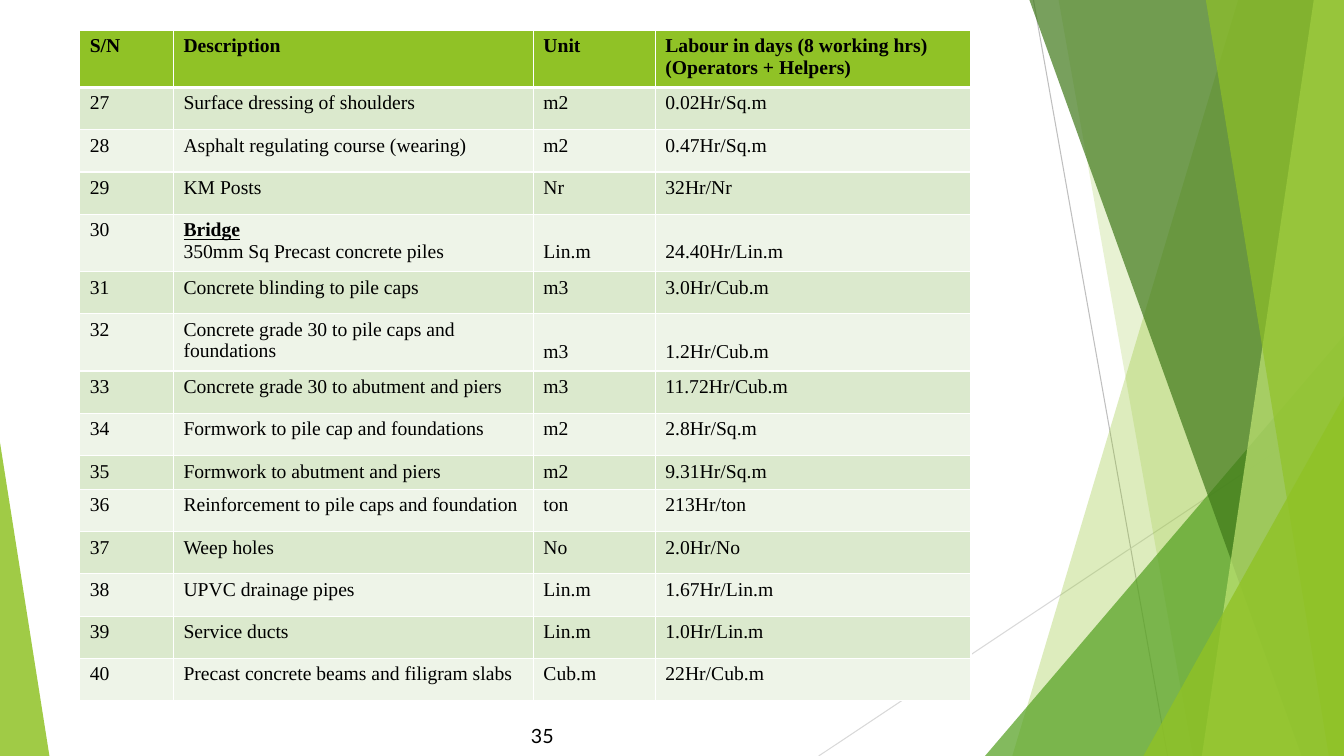
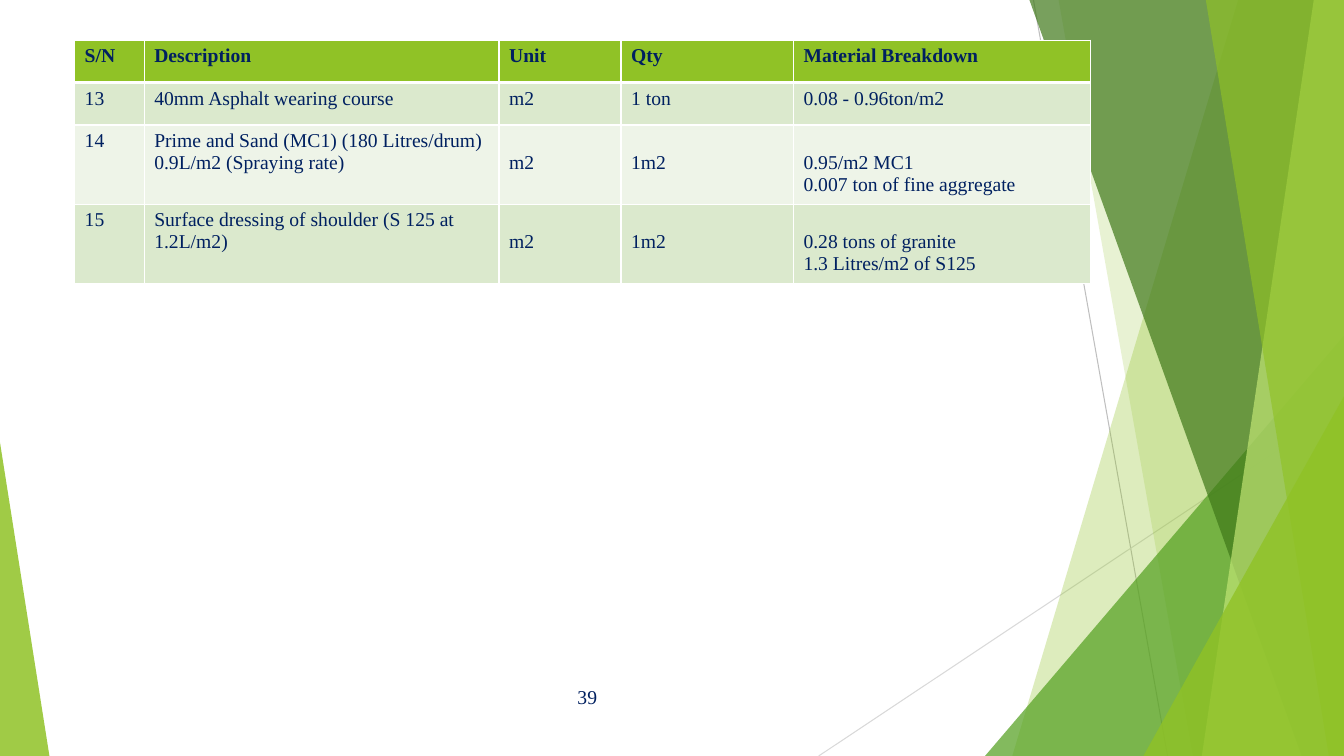
from lxml.etree import SubElement
from pptx import Presentation
from pptx.dml.color import RGBColor
from pptx.enum.shapes import MSO_CONNECTOR as Link, MSO_SHAPE as Preset
from pptx.enum.text import MSO_ANCHOR as Anchor, PP_ALIGN as Align
from pptx.oxml.ns import qn
from pptx.util import Inches, Pt

WIDE, HIGH = 13.33, 7.5
WHITE = RGBColor(0xFF, 0xFF, 0xFF)
BLACK = RGBColor(0x00, 0x00, 0x00)
NAVY = RGBColor(0x00, 0x20, 0x60)
LIME = RGBColor(0x90, 0xC2, 0x26)
PALE = RGBColor(0xC0, 0xE4, 0x74)
LEAF = RGBColor(0x54, 0xA0, 0x21)
MOSS = RGBColor(0x3F, 0x78, 0x19)
GREY = RGBColor(0xBF, 0xBF, 0xBF)
MIST = RGBColor(0xD9, 0xD9, 0xD9)
BANDS = RGBColor(0xDB, 0xE9, 0xCD), RGBColor(0xEE, 0xF4, 0xE8)

SERIF, SANS = "Times New Roman", "Lato"
INSET, LINE, ROW = 0.05, 0.22, 0.42

RAYS = [((10.25, 0), (11.58, HIGH), GREY), ((WIDE, 4.03), (8.12, HIGH), MIST)]
# A sheet is (top x, foot x); a wedge is (left, top, width, apex side)
PANES = [
    ((12.28, 10.04), LIME, 30),
    ((10.5, 11.83), LIME, 20),
    ((9.77, 3.33, 3.56, 1), LEAF, 72),
    ((10.21, 12.91), MOSS, 70),
    ((13.03, 11.92), PALE, 70),
    ((11.96, 13.18), LIME, 65),
    ((11.34, 3.93, 1.99, 1), LIME, 80),
    ((0, 4.39, 0.49, 0), LIME, 85),
]

LABOUR = [
    ("S/N", "Description", "Unit",
     "Labour in days (8 working hrs) (Operators + Helpers)"),
    ("27", "Surface dressing of shoulders", "m2", "0.02Hr/Sq.m"),
    ("28", "Asphalt regulating course (wearing)", "m2", "0.47Hr/Sq.m"),
    ("29", "KM Posts", "Nr", "32Hr/Nr"),
    ("30", "*Bridge\n350mm Sq Precast concrete piles", "Lin.m",
     "24.40Hr/Lin.m"),
    ("31", "Concrete blinding to pile caps", "m3", "3.0Hr/Cub.m"),
    ("32", "Concrete grade 30 to pile caps and foundations", "m3",
     "1.2Hr/Cub.m"),
    ("33", "Concrete grade 30 to abutment and piers", "m3", "11.72Hr/Cub.m"),
    ("34", "Formwork to pile cap and foundations", "m2", "2.8Hr/Sq.m"),
    ("35", "Formwork to abutment and piers", "m2", "9.31Hr/Sq.m"),
    ("36", "Reinforcement to pile caps and foundation", "ton", "213Hr/ton"),
    ("37", "Weep holes", "No", "2.0Hr/No"),
    ("38", "UPVC drainage pipes", "Lin.m", "1.67Hr/Lin.m"),
    ("39", "Service ducts", "Lin.m", "1.0Hr/Lin.m"),
    ("40", "Precast concrete beams and filigram slabs", "Cub.m",
     "22Hr/Cub.m"),
]
STOCK = [
    ("S/N", "Description", "Unit", "Qty", "Material Breakdown"),
    ("13", "40mm Asphalt wearing course", "m2", "1 ton", "0.08 - 0.96ton/m2"),
    ("14", "Prime and Sand (MC1) (180 Litres/drum) 0.9L/m2 (Spraying rate)",
     "m2", "1m2", "0.95/m2 MC1\n0.007 ton of fine aggregate"),
    ("15", "Surface dressing of shoulder (S 125 at 1.2L/m2)",
     "m2", "1m2", "0.28 tons of granite\n1.3 Litres/m2 of S125"),
]


def write(frame, text, color=BLACK, font=SERIF, size=14, bold=False,
          align=Align.LEFT):
    """Fill a frame line by line; a line marked * is a subheading."""
    frame.word_wrap = True
    for at, line in enumerate(text.split("\n")):
        para = frame.add_paragraph() if at else frame.paragraphs[0]
        para.alignment = align
        run = para.add_run()
        run.text = line.lstrip("*")
        face, sub = run.font, line.startswith("*")
        face.name, face.size, face.color.rgb = font, Pt(size), color
        face.bold = bold or sub
        face.underline = sub


def glaze(shape, color, alpha):
    """Give a shape a see-through fill and no line."""
    shape.shadow.inherit = False
    shape.line.fill.background()
    shape.fill.solid()
    shape.fill.fore_color.rgb = color
    tint = shape.fill._xPr.find(qn("a:solidFill"))[0]
    SubElement(tint, qn("a:alpha"), val=str(alpha * 1000))


def ray(slide, start, end, color):
    points = [Inches(n) for n in (*start, *end)]
    line = slide.shapes.add_connector(Link.STRAIGHT, *points)
    line.line.color.rgb = color
    line.line.width = Pt(0.75)
    SubElement(line._element.spPr, qn("a:effectLst"))


def sheet(slide, top, foot):
    """Outline from a slanted left edge to the right side of the slide."""
    edge = [(WIDE, 0), (WIDE, HIGH), (foot, HIGH)]
    form = slide.shapes.build_freeform(Inches(top), 0)
    form.add_line_segments([(Inches(x), Inches(y)) for x, y in edge])
    return form.convert_to_shape()


def wedge(slide, left, top, width, apex):
    """Right triangle that stands on the foot of the slide."""
    box = [Inches(n) for n in (left, top, width, HIGH - top)]
    shape = slide.shapes.add_shape(Preset.ISOSCELES_TRIANGLE, *box)
    shape.adjustments[0] = apex
    return shape


def backdrop(slide):
    for start, end, color in RAYS:
        ray(slide, start, end, color)
    for size, color, alpha in PANES:
        draw = sheet if len(size) == 2 else wedge
        glaze(draw(slide, *size), color, alpha)


def number(slide, left, top, text, **style):
    box = slide.shapes.add_textbox(
        Inches(left), Inches(top), Inches(0.75), Inches(0.4))
    box.text_frame.vertical_anchor = Anchor.MIDDLE
    write(box.text_frame, text, align=Align.RIGHT, **style)


def border(cell, **widths):
    """Draw white sides, 1 pt unless a width is given."""
    for side in "LRTB":
        line = SubElement(cell._tc.get_or_add_tcPr(), qn("a:ln" + side),
                          w=str(Pt(widths.get(side, 1))))
        fill = SubElement(line, qn("a:solidFill"))
        SubElement(fill, qn("a:srgbClr"), val=str(WHITE))


def grid(slide, left, top, cols, rows, tall, color):
    """Place a table; tall gives heights by S/N.

    Body rows with two or more lines start their last columns a line lower.
    """
    highs = [tall.get(row[0], ROW) for row in rows]
    table = slide.shapes.add_table(
        len(rows), len(cols), Inches(left), Inches(top),
        Inches(sum(cols)), Inches(sum(highs))).table
    for col, wide in zip(table.columns, cols):
        col.width = Inches(wide)
    for r, (row, high) in enumerate(zip(rows, highs)):
        table.rows[r].height = Inches(high)
        for c, text in enumerate(row):
            cell = table.cell(r, c)
            border(cell, T=3 if r == 1 else 1, B=1 if r else 3)
            cell.fill.solid()
            cell.fill.fore_color.rgb = BANDS[(r - 1) % 2] if r else LIME
            if r and c > 1 and high > ROW:
                cell.margin_top = Inches(INSET + LINE)
            write(cell.text_frame, text, color=color, bold=not r)


def main():
    deck = Presentation()
    deck.slide_width, deck.slide_height = Inches(WIDE), Inches(HIGH)
    labour, stock = (deck.slides.add_slide(deck.slide_layouts[6])
                     for _ in range(2))

    backdrop(labour)
    number(labour, 4.84, 7.1, "35", font=SANS)
    grid(labour, 0.79, 0.3, [0.93, 3.57, 1.21, 3.13], LABOUR,
         {"S/N": 0.53, "30": 0.53, "32": 0.53, "35": 0.32}, BLACK)

    backdrop(stock)
    number(stock, 5.27, 6.71, "39", color=NAVY)
    grid(stock, 0.74, 0.4, [0.69, 3.52, 1.21, 1.71, 2.95], STOCK,
         {"14": 0.75, "15": 0.75}, NAVY)

    deck.save("out.pptx")


if __name__ == "__main__":
    main()
